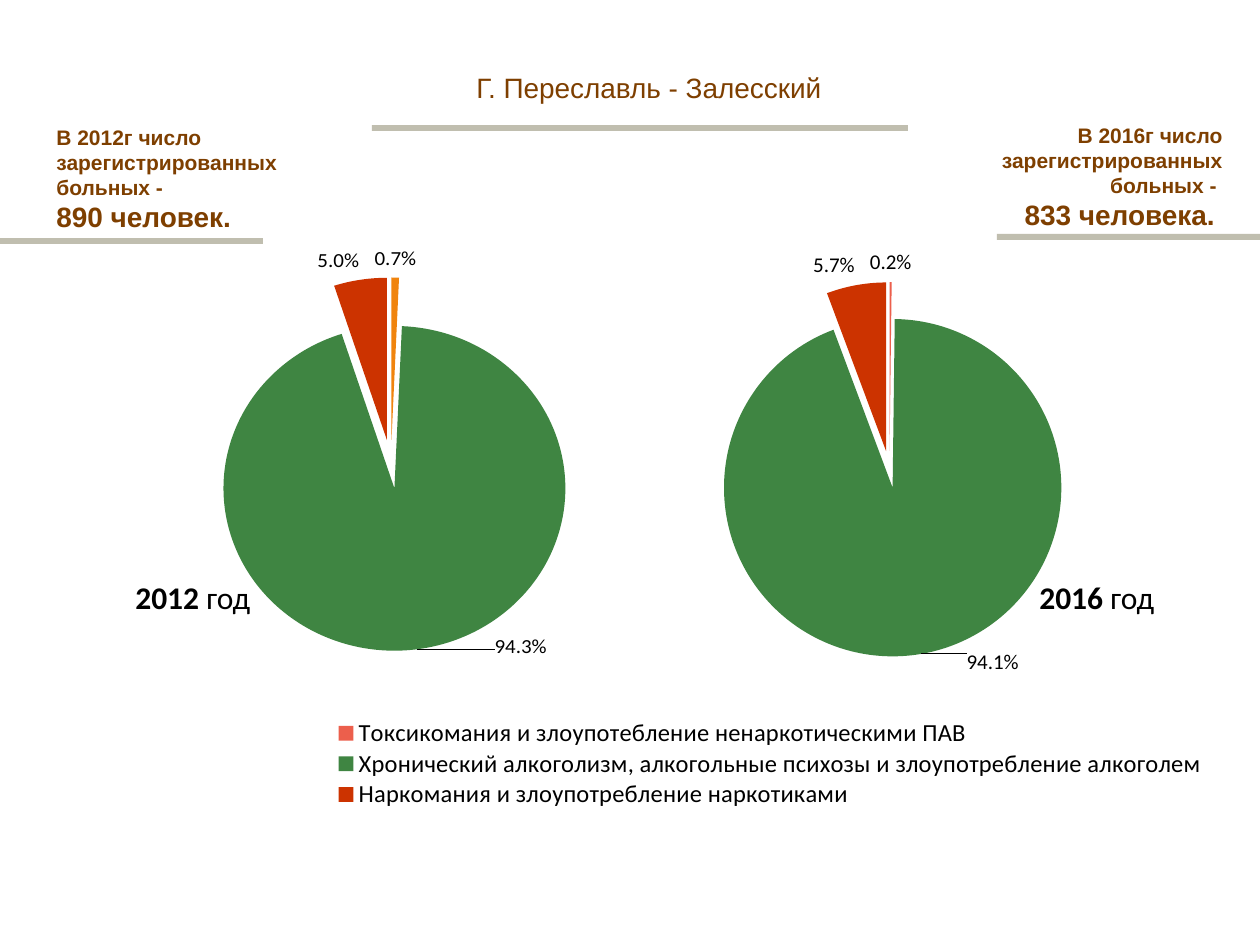
from lxml import etree
from pptx import Presentation
from pptx.chart.data import CategoryChartData
from pptx.dml.color import RGBColor
from pptx.enum import chart as kinds, shapes, text
from pptx.oxml import ns
from pptx.util import Emu, Pt

PX = 914400 // 126
BROWN, BLACK, BAR = "7E3F00", "000000", "C0BEAF"
LEFT, MID, RIGHT = text.PP_ALIGN.LEFT, text.PP_ALIGN.CENTER, text.PP_ALIGN.RIGHT

PIES = [
    dict(box=(333, 234, 873, 576), plot=(0.423, 0.081, 0.429, 0.656),
         cats=["Токсикомания и злоупотебление ненаркотическими ПАВ",
               "Хронический алкоголизм, алкогольные психозы и злоупотребление алкоголем",
               "Наркомания и злоупотребление наркотиками"],
         vals=[0.002, 0.941, 0.057], fills=["EC5F4C", "3F8542", "CC3300"],
         burst=11, shift=(0.05, -0.02), legend=(0.006, 0.84, 0.99, 0.16)),
    dict(box=(74, 244, 586, 436), plot=(0.194, 0.081, 0.694, 0.902),
         cats=["1", "2", "3"],
         vals=[0.007, 0.943, 0.05], fills=["F0840E", "3F8542", "CC3300"],
         burst=15, shift=(0.13, -0.03), legend=None),
]

TEXTS = [
    ((302, 37, 694, 100), "Arial", BROWN, MID, True,
     [[("Г. Переславль - Залесский", 16, False)]]),
    ((123, 572, 141, 50), "Calibri", BLACK, LEFT, False,
     [[("2012", 18, True), (" год", 18, False)]]),
    ((1027, 572, 141, 50), "Calibri", BLACK, LEFT, False,
     [[("2016", 18, True), (" год", 18, False)]]),
    ((44, 118, 258, 123), "Arial", BROWN, LEFT, True,
     [[("В 2012г число зарегистрированных больных -", 12, True)],
      [("890 человек.", 16, True)]]),
    ((987, 116, 248, 123), "Arial", BROWN, RIGHT, True,
     [[("В 2016г число зарегистрированных больных - ", 12, True)],
      [("833 человека. ", 16, True)]]),
]

BARS = [(372, 125, 536, 6), (997, 234, 263, 6), (0, 238, 263, 6)]


def rgb(code):
    return RGBColor.from_string(code)


def px(box):
    return [Emu(n * PX) for n in box]


def style(obj, **vals):
    for key, val in vals.items():
        setattr(obj, key, val)


def node(tag, val=None):
    item = etree.Element(ns.qn("c:" + tag))
    if val is not None:
        item.set("val", str(val))
    return item


def layout(box, inner=False, edge=True):
    top = node("layout")
    man = node("manualLayout")
    top.append(man)
    if inner:
        man.append(node("layoutTarget", "inner"))
    if edge:
        man.extend([node("xMode", "edge"), node("yMode", "edge")])
    man.extend(node(tag, val) for tag, val in zip("xywh", box))
    return top


def swap(home, new, spot):
    for old in home.findall(ns.qn("c:layout")):
        home.remove(old)
    home.insert(spot, new)


def add_pie(slide, pie):
    data = CategoryChartData(number_format="0.0%")
    data.categories = pie["cats"]
    data.add_series("Series 1", pie["vals"])
    chart = slide.shapes.add_chart(
        kinds.XL_CHART_TYPE.PIE, *px(pie["box"]), data).chart
    style(chart, has_title=False, has_legend=bool(pie["legend"]))
    style(chart.font, name="Calibri", size=Pt(18))
    chart.font.color.rgb = rgb(BLACK)
    plot = chart.plots[0]
    plot.vary_by_categories = True
    ser = plot.series[0]
    for i, code in enumerate(pie["fills"]):
        fill = ser.points[i].format.fill
        fill.solid()
        fill.fore_color.rgb = rgb(code)
    tags = ser.data_labels
    end = kinds.XL_LABEL_POSITION.OUTSIDE_END
    style(tags, show_value=True, position=end,
          number_format="0.0%", number_format_is_linked=False)
    tags.font.size = Pt(12)
    tag = ser.points[1].data_label
    tag.position = end
    tag.font.size = Pt(12)

    root = ser._element
    root.find(ns.qn("c:dPt")).addprevious(node("explosion", pie["burst"]))
    label = root.find(".//" + ns.qn("c:dLbl"))
    swap(label, layout(pie["shift"], edge=False), 1)
    form = node("numFmt")
    form.set("formatCode", "0.0%")
    form.set("sourceLinked", "0")
    label.insert(2, form)
    area = root.getparent().getparent()
    swap(area, layout(pie["plot"], inner=True), 0)

    if pie["legend"]:
        key = chart.legend
        style(key, position=kinds.XL_LEGEND_POSITION.BOTTOM,
              include_in_layout=False)
        key.font.size = Pt(14)
        swap(key._element, layout(pie["legend"]), 1)


def add_text(slide, box, font, color, align, wrap, paras):
    frame = slide.shapes.add_textbox(*px(box)).text_frame
    style(frame, word_wrap=wrap, vertical_anchor=text.MSO_ANCHOR.MIDDLE
          if align == MID else text.MSO_ANCHOR.TOP)
    for i, runs in enumerate(paras):
        para = frame.add_paragraph() if i else frame.paragraphs[0]
        para.alignment = align
        for words, size, bold in runs:
            run = para.add_run()
            run.text = words
            style(run.font, name=font, size=Pt(size), bold=bold)
            run.font.color.rgb = rgb(color)


def add_bar(slide, box):
    bar = slide.shapes.add_shape(shapes.MSO_SHAPE.RECTANGLE, *px(box))
    bar.shadow.inherit = False
    bar.fill.solid()
    bar.fill.fore_color.rgb = rgb(BAR)
    bar.line.fill.background()


def main():
    deck = Presentation()
    style(deck, slide_width=Emu(1260 * PX), slide_height=Emu(945 * PX))
    slide = deck.slides.add_slide(deck.slide_layouts[6])
    for pie in PIES:
        add_pie(slide, pie)
    for item in TEXTS:
        add_text(slide, *item)
    for box in BARS:
        add_bar(slide, box)
    deck.save("out.pptx")


if __name__ == "__main__":
    main()
